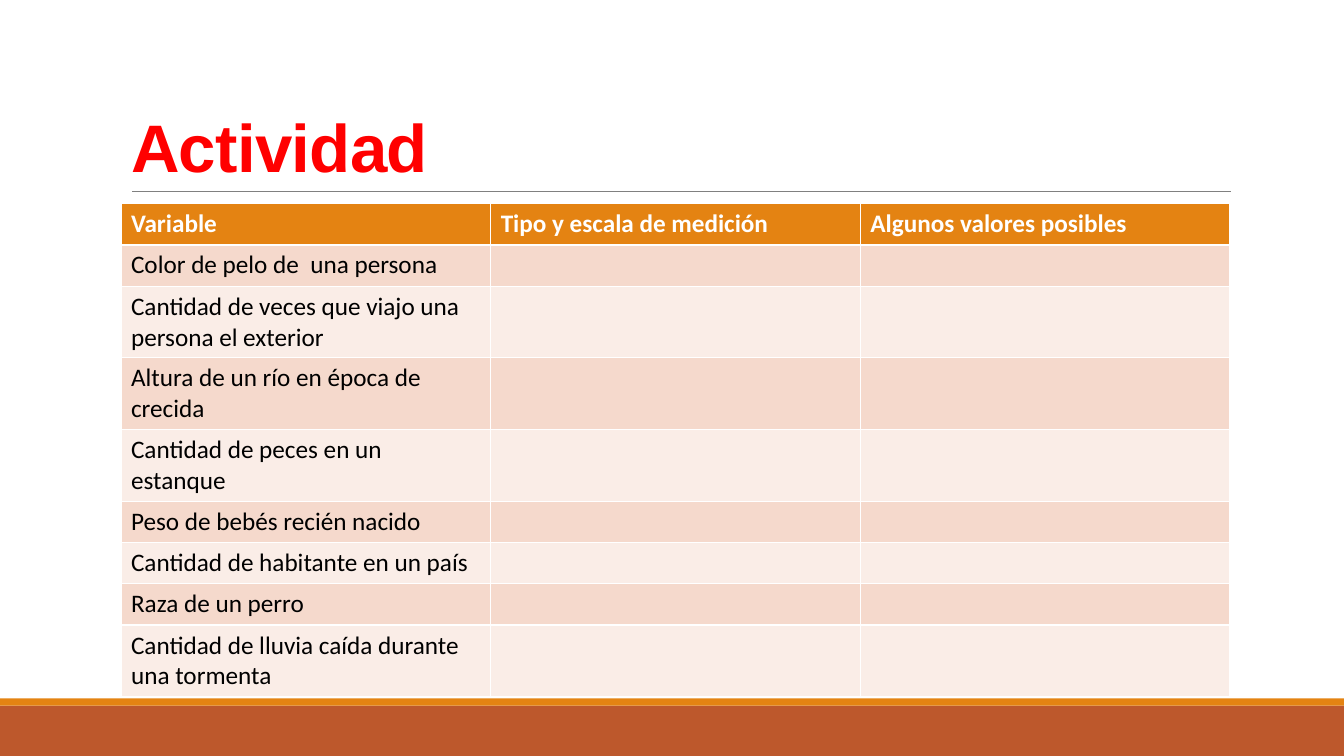
from pptx import Presentation
from pptx.dml.color import RGBColor
from pptx.enum.shapes import MSO_CONNECTOR, MSO_SHAPE
from pptx.enum.text import MSO_ANCHOR, MSO_AUTO_SIZE, PP_ALIGN
from pptx.oxml.ns import qn
from pptx.util import Inches, Pt

COLORS = {
    "rust": "BD582C",
    "orange": "E48312",
    "rule": "808080",
    "title": "FF0000",
    "white": "FFFFFF",
    "black": "000000",
    "band_dark": "F5D9CC",
    "band_light": "FAEDE7",
}
SLIDE_WIDTH, SLIDE_HEIGHT = 13.33, 7.5
HEADERS = ["Variable", "Tipo y escala de medición", "Algunos valores posibles"]
VARIABLES = [
    "Color de pelo de  una persona",
    "Cantidad de veces que viajo una persona el exterior",
    "Altura de un río en época de crecida",
    "Cantidad de peces en un estanque",
    "Peso de bebés recién nacido",
    "Cantidad de habitante en un país",
    "Raza de un perro",
    "Cantidad de lluvia caída durante una tormenta",
]


def color(name):
    """Return the named palette color."""
    return RGBColor.from_string(COLORS[name])


def write_text(frame, text, *, font="Calibri", size=18, fill="black", bold=False,
               line_spacing=None, tracking=None):
    """Write one left-aligned paragraph with the given format."""
    paragraph = frame.paragraphs[0]
    paragraph.alignment = PP_ALIGN.LEFT
    paragraph.line_spacing = line_spacing
    run = paragraph.add_run()
    run.text = text
    run.font.name = font
    run.font.size = Pt(size)
    run.font.bold = bold
    run.font.color.rgb = color(fill)
    if tracking is not None:
        run.font._element.set("spc", str(int(tracking * 100)))


def add_band(slide, left, top, width, height, fill):
    """Add a plain colored band."""
    band = slide.shapes.add_shape(
        MSO_SHAPE.RECTANGLE, Inches(left), Inches(top), Inches(width), Inches(height))
    band.shadow.inherit = False
    band.fill.solid()
    band.fill.fore_color.rgb = color(fill)
    band.line.fill.background()


def add_footer(slide, left, top, width, height):
    """Add the footer: a thin orange stripe above a rust band."""
    stripe = 0.07
    add_band(slide, left, top + stripe, width, height - stripe, "rust")
    add_band(slide, left, top, width, stripe, "orange")


def add_title(slide, left, top, width, height):
    """Place the title with a thin rule along its lower edge."""
    inset = 0.11
    bottom = Inches(top + height)
    rule = slide.shapes.add_connector(
        MSO_CONNECTOR.STRAIGHT, Inches(left + inset), bottom,
        Inches(left + width + 0.01), bottom)
    rule.line.color.rgb = color("rule")
    rule.line.width = Pt(0.5)
    properties = rule._element.spPr
    properties.append(properties.makeelement(qn("a:effectLst"), {}))

    title = slide.shapes.title
    title.left, title.top = Inches(left), Inches(top)
    title.width, title.height = Inches(width), Inches(height)
    frame = title.text_frame
    frame.auto_size = MSO_AUTO_SIZE.NONE
    frame.vertical_anchor = MSO_ANCHOR.BOTTOM
    write_text(frame, "Actividad", font="Arial", size=48, fill="title", bold=True,
               line_spacing=0.85, tracking=-0.5)


def add_variable_table(slide, left, top, width, row_height):
    """Add the table of variables with blank columns to complete."""
    rows = [HEADERS] + [[variable, "", ""] for variable in VARIABLES]
    table = slide.shapes.add_table(
        len(rows), len(HEADERS), Inches(left), Inches(top),
        Inches(width), Inches(row_height * len(rows))).table
    for row_index, row in enumerate(rows):
        header = row_index == 0
        fill = "orange" if header else ("band_light", "band_dark")[row_index % 2]
        for column_index, text in enumerate(row):
            cell = table.cell(row_index, column_index)
            cell.fill.solid()
            cell.fill.fore_color.rgb = color(fill)
            if text:
                write_text(cell.text_frame, text, bold=header,
                           fill="white" if header else "black")


def main():
    """Build and save the activity slide."""
    presentation = Presentation()
    presentation.slide_width = Inches(SLIDE_WIDTH)
    presentation.slide_height = Inches(SLIDE_HEIGHT)
    slide = presentation.slides.add_slide(presentation.slide_layouts[5])
    add_footer(slide, 0, 6.93, SLIDE_WIDTH, 0.57)
    add_title(slide, 1.2, 0.31, 11, 1.59)
    add_variable_table(slide, 1.2, 2.02, 11, 0.41)
    presentation.save("out.pptx")


if __name__ == "__main__":
    main()
